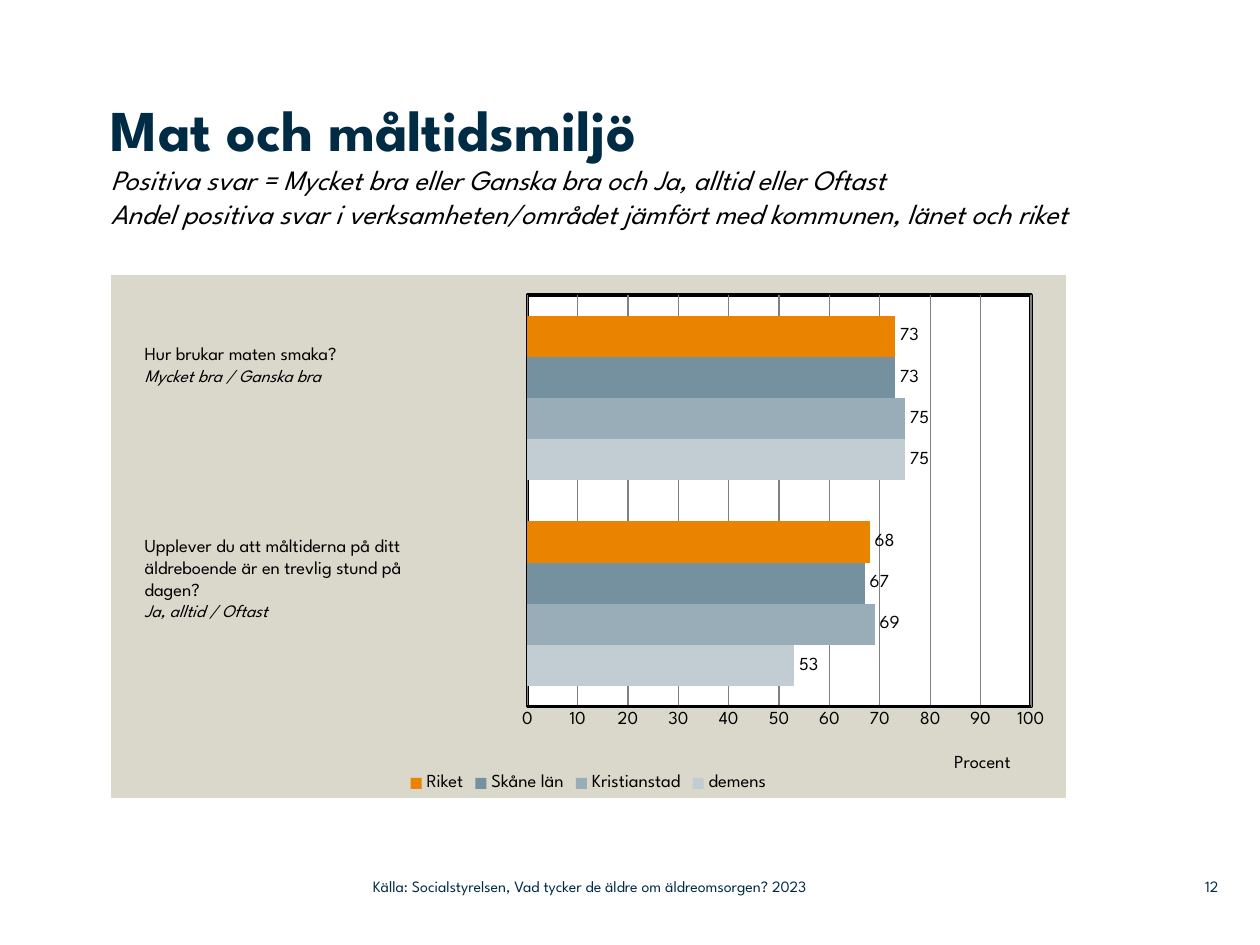
from lxml.etree import SubElement
from pptx import Presentation
from pptx.chart.data import CategoryChartData
from pptx.dml.color import RGBColor
from pptx.enum.chart import XL_CHART_TYPE, XL_LABEL_POSITION, XL_LEGEND_POSITION, XL_TICK_MARK
from pptx.enum.text import MSO_ANCHOR, MSO_AUTO_SIZE, PP_ALIGN
from pptx.oxml import parse_xml
from pptx.oxml.ns import nsdecls, qn
from pptx.util import Inches, Pt

FONT = "League Spartan"
NAVY = RGBColor(0x00, 0x2B, 0x45)
BLACK = RGBColor(0x00, 0x00, 0x00)
GRID_GREY = RGBColor(0x80, 0x80, 0x80)
SAND = RGBColor(0xDA, 0xD7, 0xCB)
SERIES = [
    ("demens", (53, 75), RGBColor(0xC2, 0xCD, 0xD3)),
    ("Kristianstad", (69, 75), RGBColor(0x99, 0xAD, 0xB9)),
    ("Skåne län", (67, 73), RGBColor(0x75, 0x90, 0x9F)),
    ("Riket", (68, 73), RGBColor(0xE9, 0x83, 0x00)),
]
COLUMNS, ROWS = 100, 75


def set_layout(parent, inner=False, **shares):
    """Give a chart part a manual position, as shares of the chart."""
    for old in parent.findall(qn("c:layout")):
        parent.remove(old)
    layout = parse_xml(f"<c:layout {nsdecls('c')}><c:manualLayout/></c:layout>")
    manual = layout[0]
    if inner:
        SubElement(manual, qn("c:layoutTarget")).set("val", "inner")
    for name in ("x", "y"):
        SubElement(manual, qn(f"c:{name}Mode")).set("val", "edge")
    for name, share in shares.items():
        SubElement(manual, qn(f"c:{name}")).set("val", str(share))
    return layout


def shape_properties(fill, line, width):
    return parse_xml(
        f"<c:spPr {nsdecls('c', 'a')}>"
        f'<a:solidFill><a:srgbClr val="{fill}"/></a:solidFill>'
        f'<a:ln w="{Pt(width)}"><a:solidFill><a:srgbClr val="{line}"/></a:solidFill></a:ln>'
        "</c:spPr>"
    )


class SlideBuilder:
    def __init__(self, presentation):
        self.cell_width = presentation.slide_width / COLUMNS
        self.cell_height = presentation.slide_height / ROWS
        self.slide = presentation.slides.add_slide(presentation.slide_layouts[5])

    def area(self, column, row, width, height):
        return (round(column * self.cell_width), round(row * self.cell_height),
                round(width * self.cell_width), round(height * self.cell_height))

    def style(self, font, size, color=BLACK, bold=False, italic=False):
        font.name, font.size = FONT, Pt(size)
        font.bold, font.italic = bold, italic
        font.color.rgb = color

    def add_run(self, paragraph, text, size, **look):
        run = paragraph.add_run()
        run.text = text
        self.style(run.font, size, **look)

    def clear_margins(self, frame):
        frame.margin_left = frame.margin_right = frame.margin_top = frame.margin_bottom = 0

    def title(self, heading, subtitles, area):
        shape = self.slide.shapes.title
        shape.left, shape.top, shape.width, shape.height = self.area(*area)
        frame = shape.text_frame
        self.clear_margins(frame)
        frame.word_wrap = True
        frame.auto_size = MSO_AUTO_SIZE.NONE
        frame.vertical_anchor = MSO_ANCHOR.TOP
        paragraph = frame.paragraphs[0]
        paragraph.alignment = PP_ALIGN.LEFT
        self.add_run(paragraph, heading, 33, color=NAVY, bold=True)
        for subtitle in subtitles:
            paragraph.add_line_break()
            self.add_run(paragraph, subtitle, 16, italic=True)

    def text_box(self, area):
        frame = self.slide.shapes.add_textbox(*self.area(*area)).text_frame
        frame.word_wrap = True
        return frame

    def question(self, lines, answer, area):
        frame = self.text_box(area)
        frame.auto_size = MSO_AUTO_SIZE.SHAPE_TO_FIT_TEXT
        for index, line in enumerate(lines):
            paragraph = frame.add_paragraph() if index else frame.paragraphs[0]
            self.add_run(paragraph, line, 10.5)
        self.add_run(frame.add_paragraph(), answer, 10, italic=True)

    def footer(self, text, area, alignment=PP_ALIGN.LEFT):
        frame = self.text_box(area)
        self.clear_margins(frame)
        frame.vertical_anchor = MSO_ANCHOR.MIDDLE
        paragraph = frame.paragraphs[0]
        paragraph.alignment = alignment
        self.add_run(paragraph, text, 9, color=NAVY)

    def bar_chart(self, area):
        data = CategoryChartData()
        data.categories = ["1", "2"]
        for name, values, _ in SERIES:
            data.add_series(name, values)
        chart = self.slide.shapes.add_chart(
            XL_CHART_TYPE.BAR_CLUSTERED, *self.area(*area), data).chart
        self.style(chart.font, 10.5)
        chart.has_title = False
        chart.has_legend = True
        chart.legend.position = XL_LEGEND_POSITION.BOTTOM
        chart.legend.include_in_layout = False
        self.style(chart.legend.font, 10.5)
        self.format_bars(chart.plots[0])
        self.format_axes(chart)
        self.format_backgrounds(chart)

    def format_bars(self, plot):
        plot.gap_width, plot.overlap = 100, 0
        plot.vary_by_categories = False
        for series, (_, _, color) in zip(plot.series, SERIES):
            series.format.fill.solid()
            series.format.fill.fore_color.rgb = color
            labels = series.data_labels
            labels.show_value = True
            labels.position = XL_LABEL_POSITION.OUTSIDE_END
            self.style(labels.font, 10.5)

    def format_axes(self, chart):
        chart.category_axis.visible = False
        axis = chart.value_axis
        axis.minimum_scale, axis.maximum_scale, axis.major_unit = 0, 100, 10
        axis.major_tick_mark = axis.minor_tick_mark = XL_TICK_MARK.NONE
        axis.format.line.color.rgb, axis.format.line.width = BLACK, Pt(2)
        axis.major_gridlines.format.line.color.rgb = GRID_GREY
        axis.major_gridlines.format.line.width = Pt(0.75)
        self.style(axis.tick_labels.font, 10.5)
        title = axis.axis_title
        self.add_run(title.text_frame.paragraphs[0], "Procent", 10.5)
        element = title._element
        layout = set_layout(element, x=0.88, y=0.91)
        element.find(qn("c:tx")).addnext(layout)

    def format_backgrounds(self, chart):
        plot_area = chart._chartSpace.chart.plotArea
        plot_area.insert(0, set_layout(plot_area, inner=True, x=0.436, y=0.038, w=0.528, h=0.789))
        plot_area.append(shape_properties("FFFFFF", BLACK, 2))
        chart._chartSpace.chart.addnext(shape_properties(SAND, SAND, 0.75))


def main():
    presentation = Presentation()
    presentation.slide_width, presentation.slide_height = Inches(10), Inches(7.5)
    builder = SlideBuilder(presentation)
    builder.bar_chart((8.8, 21.8, 75.8, 41.5))
    builder.title(
        "Mat och måltidsmiljö",
        ["Positiva svar = Mycket bra eller Ganska bra och Ja, alltid eller Oftast",
         "Andel positiva svar i verksamheten/området jämfört med kommunen, länet och riket"],
        (8.8, 7.4, 84.2, 14.4))
    builder.question(["Hur brukar maten smaka?"], "Mycket bra / Ganska bra",
                     (10.5, 26.7, 27.7, 6.3))
    builder.question(
        ["Upplever du att måltiderna på ditt äldreboende är en trevlig stund på", "dagen?"],
        "Ja, alltid / Oftast", (10.5, 41.9, 27.7, 9.8))
    builder.footer("12", (92, 68.9, 4.7, 2.9), PP_ALIGN.RIGHT)
    builder.footer("Källa: Socialstyrelsen, Vad tycker de äldre om äldreomsorgen? 2023",
                   (29.6, 68.9, 44.3, 2.9))
    presentation.save("out.pptx")


if __name__ == "__main__":
    main()
